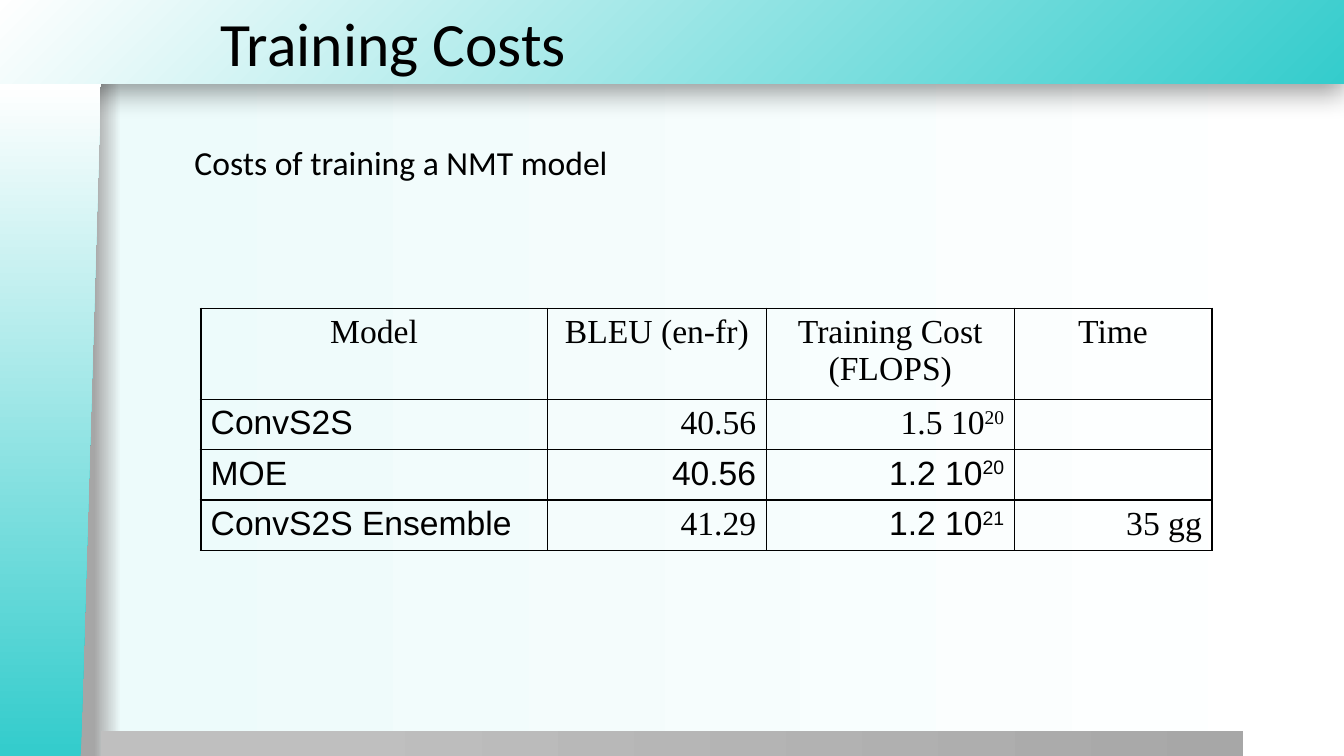
from dataclasses import dataclass

from lxml import etree
from pptx import Presentation
from pptx.dml.color import RGBColor
from pptx.enum.shapes import MSO_SHAPE
from pptx.enum.text import MSO_ANCHOR, PP_ALIGN
from pptx.oxml import parse_xml
from pptx.oxml.ns import nsdecls, qn
from pptx.util import Inches, Pt

RECT = MSO_SHAPE.RECTANGLE
SLANT = MSO_SHAPE.FLOWCHART_MANUAL_INPUT
TOP, MIDDLE = MSO_ANCHOR.TOP, MSO_ANCHOR.MIDDLE
LEFT, CENTER, RIGHT = PP_ALIGN.LEFT, PP_ALIGN.CENTER, PP_ALIGN.RIGHT


@dataclass(frozen=True)
class Theme:
    ink: str = "000000"
    teal: str = "34CCCC"
    pale: str = "EDFBFB"
    white: str = "FFFFFF"
    edge: str = "A6A6A6"
    silver: str = "BFBFBF"
    gray: str = "A7A7A7"
    sans: str = "Calibri"
    serif: str = "Times New Roman"
    plain: str = "Arial"
    title: int = 44
    body: int = 24
    thin: float = 1
    thick: float = 1.5


class Deck:
    def __init__(self, theme):
        self.theme = theme
        self.prs = Presentation()
        self.prs.slide_width, self.prs.slide_height = Inches(13.33), Inches(7.5)
        self.slide = self.prs.slides.add_slide(self.prs.slide_layouts[6])

    def blend(self, owner, root, stops, radial=False):
        """Fill owner, found under root, with (percent, colour) stops."""
        owner.fill.gradient()
        grad = root.find(".//" + qn("a:gradFill"))
        for child in list(grad):
            grad.remove(child)
        marks = "".join(f'<a:gs pos="{pos * 1000}"><a:srgbClr val="{tint}"/></a:gs>'
                        for pos, tint in stops)
        grad.append(parse_xml(f'<a:gsLst {nsdecls("a")}>{marks}</a:gsLst>'))
        if radial:
            grad.append(parse_xml(f'<a:path {nsdecls("a")} path="circle">'
                                  '<a:fillToRect l="100000" t="100000"/></a:path>'))
        else:
            grad.append(parse_xml(f'<a:lin {nsdecls("a")} ang="0" scaled="0"/>'))

    def back(self, stops):
        self.blend(self.slide.background, self.slide.element, stops)

    def panel(self, kind, box, stops, radial=False):
        shape = self.slide.shapes.add_shape(kind, *map(Inches, box))
        shape.shadow.inherit = False
        shape.line.fill.background()
        self.blend(shape, shape.element, stops, radial)
        return shape

    def shade(self, shape):
        """Cast a soft shadow straight down."""
        shape.element.find(".//" + qn("a:effectLst")).append(parse_xml(
            f'<a:outerShdw {nsdecls("a")} blurRad="{Pt(20)}" dist="{Pt(6)}" '
            f'dir="5400000" rotWithShape="0"><a:srgbClr val="{self.theme.ink}">'
            '<a:alpha val="40000"/></a:srgbClr></a:outerShdw>'))

    def style(self, run, face, size):
        run.font.name, run.font.size = face, Pt(size)
        run.font.color.rgb = RGBColor.from_string(self.theme.ink)

    def text(self, box, words, size, anchor=TOP):
        frame = self.slide.shapes.add_textbox(*map(Inches, box)).text_frame
        frame.word_wrap, frame.vertical_anchor = True, anchor
        frame.text = words
        self.style(frame.paragraphs[0].runs[0], self.theme.sans, size)

    def cell(self, cell, words, face, align):
        """Write one cell; a caret in words starts a superscript."""
        cell.fill.background()
        para = cell.text_frame.paragraphs[0]
        para.alignment = align
        for spot, part in enumerate(words.split("^")):
            if part:
                run = para.add_run()
                run.text = part
                self.style(run, face, self.theme.body)
                if spot:
                    run.font._element.set("baseline", "30000")

    def border(self, cell, outer):
        """Rule all four sides, thicker on those named in outer."""
        props = cell._tc.get_or_add_tcPr()
        for spot, side in enumerate("LRTB"):
            width = self.theme.thick if side in outer else self.theme.thin
            line = etree.Element(qn(f"a:ln{side}"), w=str(Pt(width)))
            fill = etree.SubElement(line, qn("a:solidFill"))
            etree.SubElement(fill, qn("a:srgbClr"), val=self.theme.ink)
            props.insert(spot, line)

    def table(self, spot, cols, highs, rows):
        box = (*spot, sum(cols), sum(highs))
        table = self.slide.shapes.add_table(
            len(rows), len(cols), *map(Inches, box)).table
        table.first_row = table.horz_banding = False
        for col, width in zip(table.columns, cols):
            col.width = Inches(width)
        for row, high in zip(table.rows, highs):
            row.height = Inches(high)
        for r, row in enumerate(rows):
            for c, (words, face) in enumerate(row):
                align = CENTER if r == 0 else RIGHT if c else LEFT
                cell = table.cell(r, c)
                self.cell(cell, words, face, align)
                ends = {"L": c == 0, "R": c == len(cols) - 1,
                        "T": r == 0, "B": r == len(rows) - 1}
                self.border(cell, [side for side, on in ends.items() if on])


def main():
    t = Theme()
    deck = Deck(t)
    deck.back([(7, t.edge), (9, t.pale), (100, t.white)])

    banner = deck.panel(RECT, (-0.01, 0, 13.34, 0.83),
                        [(0, t.teal), (100, t.white)], radial=True)
    deck.shade(banner)
    deck.panel(RECT, (1, 7.25, 11.33, 0.26), [(20, t.silver), (100, t.gray)])
    side = deck.panel(SLANT, (-2.84, 3.67, 6.68, 1), [(1, t.teal), (100, t.white)])
    side.rotation = 270
    side.element.find(".//" + qn("a:xfrm")).set("flipV", "1")

    deck.text((2.09, 0, 11.25, 0.83), "Training Costs", t.title, MIDDLE)
    deck.text((1.83, 1.36, 10.5, 0.87), "Costs of training a NMT model", t.body)

    heads = ("Model", "BLEU (en-fr)", "Training Cost (FLOPS)", "Time")
    rows = [
        [(head, t.serif) for head in heads],
        [("ConvS2S", t.plain), ("40.56", t.serif), ("1.5 10^20", t.serif), ("", t.serif)],
        [("MOE", t.plain), ("40.56", t.plain), ("1.2 10^20", t.plain), ("", t.serif)],
        [("ConvS2S Ensemble", t.plain), ("41.29", t.serif), ("1.2 10^21", t.plain),
         ("35 gg", t.serif)],
    ]
    deck.table((1.99, 3.06), (3.44, 2.17, 2.46, 1.96), (0.83, 0.47, 0.47, 0.47), rows)
    deck.prs.save("out.pptx")


if __name__ == "__main__":
    main()
